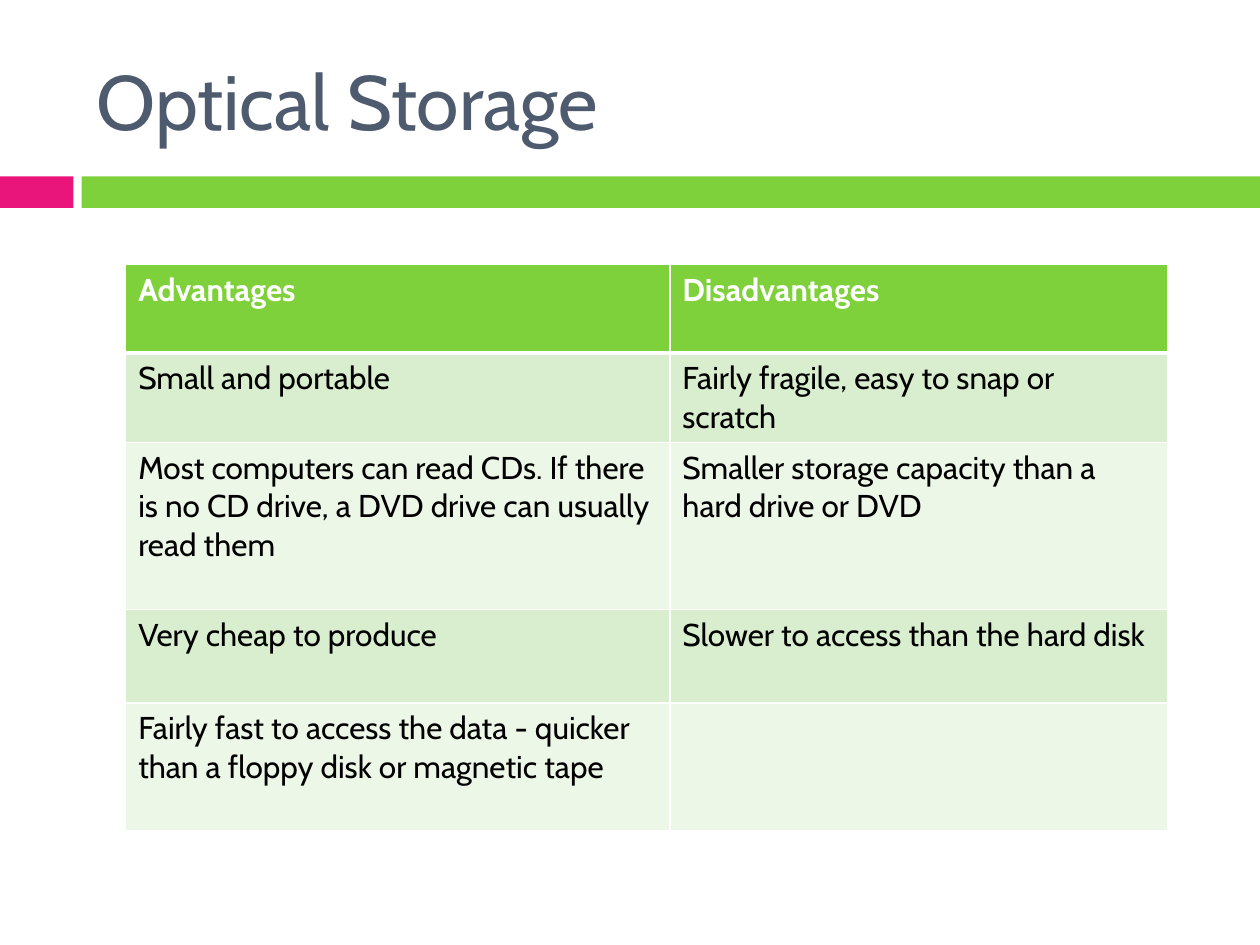
from lxml.etree import SubElement
from pptx import Presentation
from pptx.dml.color import RGBColor
from pptx.enum.shapes import MSO_SHAPE as Shape
from pptx.enum.text import MSO_ANCHOR as Anchor, PP_ALIGN as Align
from pptx.oxml.ns import qn
from pptx.util import Pt

GREEN = "7FD13B"
PINK = "EA157A"
SLATE = "4E5B6F"
WHITE = "FFFFFF"
BLACK = "000000"
BANDS = ("ECF7E8", "D8EECE")

COLUMN_WIDTHS = (311, 284.4)
ROW_HEIGHTS = (50.5, 51, 95.5, 53.5, 73)
COMPARISON = (
    ("Advantages", "Disadvantages"),
    ("Small and portable", "Fairly fragile, easy to snap or scratch"),
    ("Most computers can read CDs. If there is no CD drive, a DVD drive can usually read them",
     "Smaller storage capacity than a hard drive or DVD"),
    ("Very cheap to produce", "Slower to access than the hard disk"),
    ("Fairly fast to access the data - quicker than a floppy disk or magnetic tape", ""),
)


def paint(fill, color):
    fill.solid()
    fill.fore_color.rgb = RGBColor.from_string(color)


def add_run(paragraph, text, size, color, bold=False):
    run = paragraph.add_run()
    run.text = text
    run.font.name = "Cabin"
    run.font.size = Pt(size)
    run.font.bold = bold
    run.font.color.rgb = RGBColor.from_string(color)


def add_band(slide, left, width, color):
    band = slide.shapes.add_shape(Shape.RECTANGLE, Pt(left), Pt(100.8), Pt(width), Pt(18))
    band.shadow.inherit = False
    paint(band.fill, color)
    band.line.fill.background()


def set_title(slide, text):
    title = slide.shapes.title
    title.left, title.top, title.width, title.height = Pt(48), Pt(18), Pt(642), Pt(78)
    title.text_frame.vertical_anchor = Anchor.MIDDLE
    heading = title.text_frame.paragraphs[0]
    heading.alignment = Align.LEFT
    add_run(heading, text, 44, SLATE)


def set_borders(cell, top, bottom):
    properties = cell._tc.get_or_add_tcPr()
    widths = {"a:lnL": 1, "a:lnR": 1, "a:lnT": top, "a:lnB": bottom}
    for position, (side, width) in enumerate(widths.items()):
        border = properties.makeelement(qn(side), {"w": str(Pt(width))})
        properties.insert(position, border)
        solid = SubElement(border, qn("a:solidFill"))
        SubElement(solid, qn("a:srgbClr"), val=WHITE)


def add_comparison(slide):
    frame = slide.shapes.add_table(
        len(COMPARISON), len(COLUMN_WIDTHS), Pt(71.8), Pt(151.2),
        Pt(sum(COLUMN_WIDTHS)), Pt(sum(ROW_HEIGHTS)))
    table = frame.table
    for column, width in zip(table.columns, COLUMN_WIDTHS):
        column.width = Pt(width)
    for row_number, (row, height) in enumerate(zip(table.rows, ROW_HEIGHTS)):
        row.height = Pt(height)
        is_header = row_number == 0
        for cell, text in zip(row.cells, COMPARISON[row_number]):
            paint(cell.fill, GREEN if is_header else BANDS[row_number % 2])
            set_borders(cell, 3 if row_number == 1 else 1, 3 if is_header else 1)
            if text:
                add_run(cell.text_frame.paragraphs[0], text, 18,
                        WHITE if is_header else BLACK, is_header)


def main():
    deck = Presentation()
    deck.slide_width, deck.slide_height = Pt(720), Pt(540)
    slide = deck.slides.add_slide(deck.slide_layouts[5])
    paint(slide.background.fill, WHITE)
    add_band(slide, 0, 42, PINK)
    add_band(slide, 46.6, 673.4, GREEN)
    set_title(slide, "Optical Storage")
    add_comparison(slide)
    deck.save("out.pptx")


if __name__ == "__main__":
    main()
